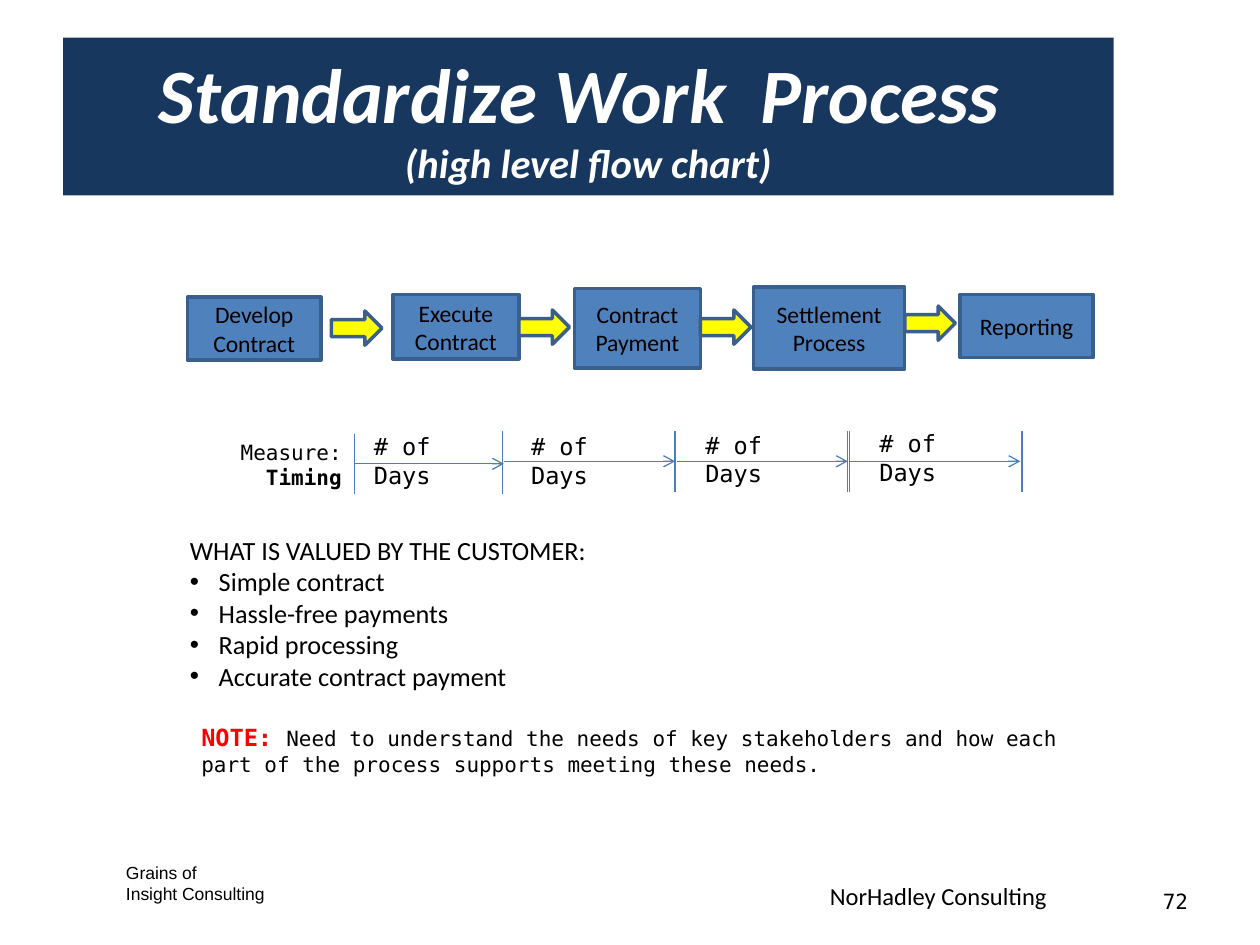
from pptx import Presentation
from pptx.dml.color import RGBColor
from pptx.enum import shapes, text
from pptx.oxml import ns, xmlchemy as xc
from pptx.util import Cm, Pt

NAVY = RGBColor(0x17, 0x37, 0x5E)
BLUE = RGBColor(0x4F, 0x81, 0xBD)
EDGE = RGBColor(0x3A, 0x5F, 0x8C)
RULE = RGBColor(0x4B, 0x7E, 0xBC)
YELLOW = RGBColor(0xFF, 0xFF, 0x00)
RED = RGBColor(0xFF, 0x00, 0x00)
BLACK = RGBColor(0, 0, 0)
WHITE = RGBColor(0xFF, 0xFF, 0xFF)
SANS, MONO, ARIAL = "Calibri", "DejaVu Sans Mono", "Arial"
LEFT, MID, RIGHT = text.PP_ALIGN.LEFT, text.PP_ALIGN.CENTER, text.PP_ALIGN.RIGHT

# Content: lengths in cm
STEPS = [  # label, box
    ("Develop Contract", (3.78, 5.99, 2.69, 1.27)),
    ("Execute Contract", (7.92, 5.94, 2.54, 1.3)),
    ("Contract Payment", (11.58, 5.82, 2.54, 1.6)),
    ("Settlement Process", (15.19, 5.79, 3.05, 1.65)),
    ("Reporting", (19.35, 5.94, 2.69, 1.27)),
]
ARROWS = [(6.68, 6.27), (10.46, 6.25), (14.12, 6.25), (18.24, 6.17)]
ARROW_W, ARROW_H = 1.02, 0.69

SPANS = [  # start, end, top, ticks, label left and top
    (7.14, 10.16, 8.74, (7.14, 10.13), (7.29, 8.59)),
    (10.16, 13.61, 8.69, (10.13,), (10.46, 8.59)),
    (13.64, 17.09, 8.69, (13.61, 17.09), (13.97, 8.56)),
    (17.12, 20.57, 8.69, (17.12, 20.6), (17.48, 8.53)),
]
TICK = 1.22

VALUES = ["Simple contract", "Hassle-free payments", "Rapid processing",
          "Accurate contract payment"]

# Each run: words, size, font, colour, bold
TEXTS = [  # box, alignment, paragraphs of runs
    ((2.29, 17.25, 5.97, 1.12), LEFT,
     [[("Grains of", 10, ARIAL, BLACK, False)],
      [("Insight Consulting", 10, ARIAL, BLACK, False)]]),
    ((16.48, 17.63, 7.42, 0.58), LEFT,
     [[("NorHadley Consulting", 14, SANS, BLACK, False)]]),
    ((3.18, 8.74, 3.96, 0.76), RIGHT,
     [[("Measure: ", 12, MONO, BLACK, False), ("Timing", 12, MONO, BLACK, True)]]),
    ((3.81, 14.45, 18.08, 1.35), LEFT,
     [[("NOTE: ", 13.5, MONO, RED, True),
       ("Need to understand the needs of key stakeholders and how each part "
        "of the process supports meeting these needs.", 12, MONO, BLACK, False)]]),
]


def place(box):
    return [Cm(v) for v in box]


def add_run(para, words, size, face, color, bold=False):
    run = para.add_run()
    run.text = words
    font = run.font
    font.size, font.name, font.bold = Pt(size), face, bold
    font.color.rgb = color
    return run


def add_text(box, align, paras):
    frame = slide.shapes.add_textbox(*place(box)).text_frame
    frame.word_wrap = True
    for i, runs in enumerate(paras):
        para = frame.paragraphs[0] if i == 0 else frame.add_paragraph()
        para.alignment = align
        for run in runs:
            add_run(para, *run)
    return frame


def add_block(kind, box, fill):
    block = slide.shapes.add_shape(kind, *place(box))
    block.shadow.inherit = False
    block.fill.solid()
    block.fill.fore_color.rgb = fill
    block.line.color.rgb = EDGE
    block.line.width = Pt(2)
    return block


def add_line(x1, y1, x2, y2, head=False):
    line = slide.shapes.add_connector(
        shapes.MSO_CONNECTOR.STRAIGHT, *place((x1, y1, x2, y2)))
    line.line.color.rgb = RULE
    line.line.width = Pt(0.75)
    props = line._element.spPr
    if head:
        tail = xc.OxmlElement("a:tailEnd")
        tail.set("type", "arrow")
        props.find(ns.qn("a:ln")).append(tail)
    props.append(xc.OxmlElement("a:effectLst"))


def add_bullet(para):
    props = para._p.get_or_add_pPr()
    props.set("marL", str(Cm(0.58)))
    props.set("indent", str(-Cm(0.58)))
    for tag, key, val in (("a:buFont", "typeface", ARIAL), ("a:buChar", "char", "•")):
        node = xc.OxmlElement(tag)
        node.set(key, val)
        props.append(node)


deck = Presentation()
deck.slide_width, deck.slide_height = Cm(25.4), Cm(19.05)
slide = deck.slides.add_slide(deck.slide_layouts[5])

# Title banner
title = slide.shapes.title
title.left, title.top, title.width, title.height = place((1.27, 0.76, 21.18, 3.18))
title.fill.solid()
title.fill.fore_color.rgb = NAVY
frame = title.text_frame
frame.word_wrap = True
frame.auto_size = text.MSO_AUTO_SIZE.NONE
frame.vertical_anchor = text.MSO_ANCHOR.MIDDLE
para = frame.paragraphs[0]
para.alignment = MID
add_run(para, "Standardize Work  Process ", 44, SANS, WHITE, True).font.italic = True
para.add_line_break()
add_run(para, "(high level flow chart)", 23.2, SANS, WHITE, True).font.italic = True

# Process steps and the arrows between them
for label, box in STEPS:
    frame = add_block(shapes.MSO_SHAPE.RECTANGLE, box, BLUE).text_frame
    frame.word_wrap = True
    frame.vertical_anchor = text.MSO_ANCHOR.MIDDLE
    frame.paragraphs[0].alignment = MID
    add_run(frame.paragraphs[0], label, 13.5, SANS, BLACK)
for spot in ARROWS:
    add_block(shapes.MSO_SHAPE.RIGHT_ARROW, (*spot, ARROW_W, ARROW_H), YELLOW)

# Timeline
for start, end, top, ticks, spot in SPANS:
    for x in ticks:
        add_line(x, top, x, top + TICK)
    mid = top + TICK / 2
    add_line(start, mid, end, mid, head=True)
    add_text((*spot, 2.72, 0.84), LEFT, [[("# of Days", 13.5, MONO, BLACK)]])

# Footers, measure and note
for item in TEXTS:
    add_text(*item)

# Customer values
lines = ["WHAT IS VALUED BY THE CUSTOMER:"] + VALUES
frame = add_text((3.58, 10.64, 16.99, 3.45), LEFT,
                 [[(line, 15, SANS, BLACK)] for line in lines])
for para in frame.paragraphs[1:]:
    add_bullet(para)

# Page number
frame = add_text((18.21, 17.65, 5.92, 1.02), RIGHT, [[("72", 12, MONO, BLACK)]])
frame.vertical_anchor = text.MSO_ANCHOR.MIDDLE
frame.margin_left = frame.margin_right = Cm(0.18)
frame.margin_top = frame.margin_bottom = Cm(0.1)

deck.save("out.pptx")
